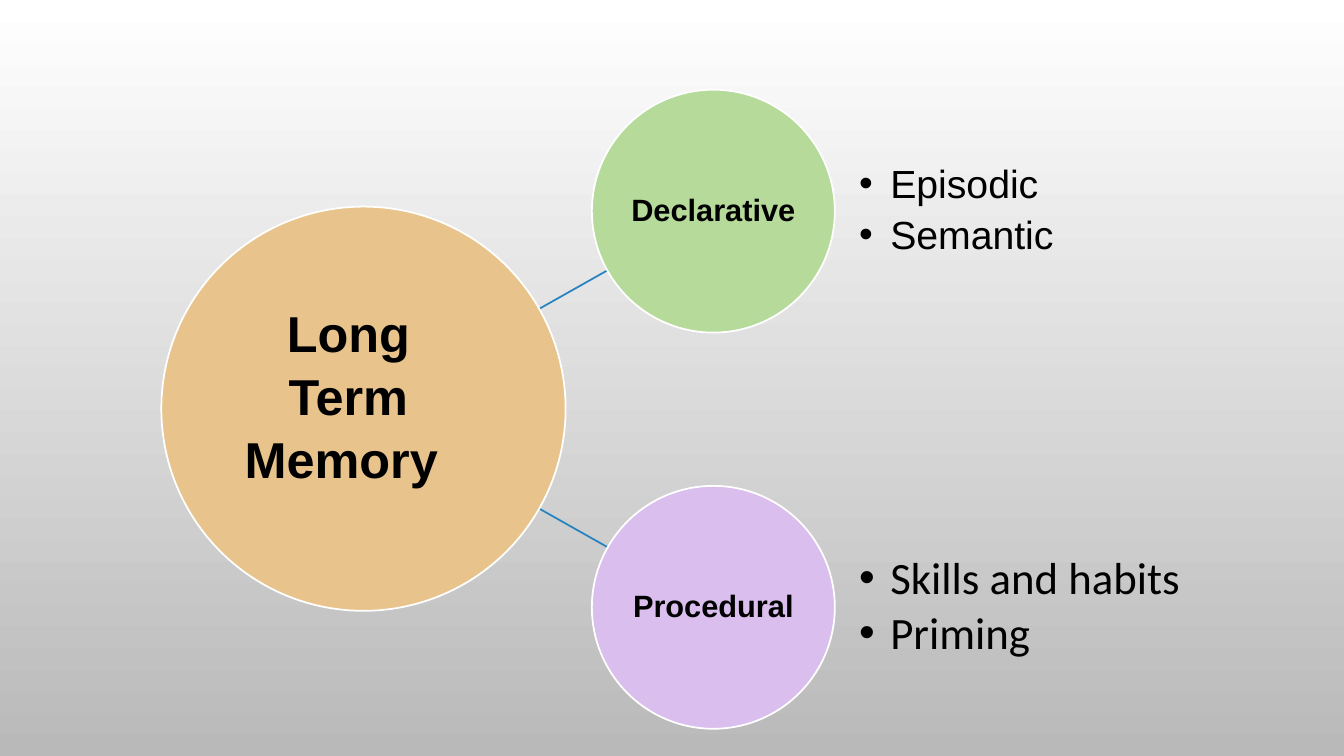
import pptx
import pptx.util
import pptx.dml.color
import pptx.enum.shapes
import pptx.enum.text
from lxml import etree
from pptx.oxml.ns import qn

Inches, Pt = pptx.util.Inches, pptx.util.Pt

# Content
HUB = "Long Term Memory "
BRANCHES = [
    dict(name="Declarative ", fill="B6DA9A", items=["Episodic", "Semantic"],
         font="Arial", size=28, gap=6),
    dict(name="Procedural ", fill="DABEED", items=["Skills and habits", "Priming"],
         font="Calibri", size=32, gap=4.5),
]

# Layout
HUB_LEFT, HUB_TOP, HUB_SIZE = 1.6, 2.05, 4.01
BRANCH_LEFT, BRANCH_TOP, BRANCH_SIZE, BRANCH_STEP = 5.87, 0.89, 2.41, 3.93
LIST_LEFT, LIST_WIDTH = 8.52, 3.61
LINK_START, LINK_END = (5.01, 0.8), (6.02, 1.37)  # x, distance from hub centre
INDENT = 0.31


def color(value):
    return pptx.dml.color.RGBColor.from_string(value)


def set_all(target, values):
    for name, value in values.items():
        setattr(target, name, value)


def set_frame(frame, inset):
    set_all(frame, dict(word_wrap=True,
                        vertical_anchor=pptx.enum.text.MSO_ANCHOR.MIDDLE))
    for side in ("left", "top", "right", "bottom"):
        setattr(frame, "margin_" + side, Inches(inset))


def write(para, text, font, size, bold=False, **layout):
    set_all(para, layout)
    span = para.add_run()
    span.text = text
    set_all(span.font, dict(name=font, size=Pt(size), bold=bold))
    span.font.color.rgb = color("000000")


def add_circle(page, left, top, width, height, fill=None):
    circle = page.shapes.add_shape(pptx.enum.shapes.MSO_SHAPE.OVAL, Inches(left),
                                   Inches(top), Inches(width), Inches(height))
    circle.shadow.inherit = False
    if fill:
        circle.fill.solid()
        circle.fill.fore_color.rgb = color(fill)
        circle.line.color.rgb = color("FFFFFF")
        circle.line.width = Pt(1.25)
    else:
        circle.fill.background()
        circle.line.fill.background()
    return circle


def add_link(page, direction):
    middle = HUB_TOP + HUB_SIZE / 2
    ends = [Inches(value) for x, rise in (LINK_START, LINK_END)
            for value in (x, middle + direction * rise)]
    link = page.shapes.add_connector(pptx.enum.shapes.MSO_CONNECTOR.STRAIGHT, *ends)
    link.line.color.rgb = color("2683BF")
    link.line.width = Pt(1.25)
    etree.SubElement(link._element.spPr, qn("a:effectLst"))


def add_bullet(para):
    props = para._p.get_or_add_pPr()
    props.set("marL", str(Inches(INDENT)))
    props.set("indent", str(-Inches(INDENT)))
    etree.SubElement(props, qn("a:buFont")).set("typeface", "Arial")
    etree.SubElement(props, qn("a:buChar")).set("char", "•")


def add_branch(page, top, branch):
    circle = add_circle(page, BRANCH_LEFT, top, BRANCH_SIZE, BRANCH_SIZE, branch["fill"])
    set_frame(circle.text_frame, 0.02)
    write(circle.text_frame.paragraphs[0], branch["name"], "Arial", 22, True,
          alignment=pptx.enum.text.PP_ALIGN.CENTER, line_spacing=0.9)

    box = page.shapes.add_textbox(Inches(LIST_LEFT), Inches(top),
                                  Inches(LIST_WIDTH), Inches(BRANCH_SIZE))
    set_frame(box.text_frame, 0)
    for number, item in enumerate(branch["items"]):
        para = box.text_frame.add_paragraph() if number else box.text_frame.paragraphs[0]
        add_bullet(para)
        write(para, item, branch["font"], branch["size"],
              line_spacing=0.9, space_after=Pt(branch["gap"]))


def main():
    deck = pptx.Presentation()
    set_all(deck, dict(slide_width=Inches(13.33), slide_height=Inches(7.5)))
    page = deck.slides.add_slide(deck.slide_layouts[6])

    # Background
    backdrop = page.background.fill
    backdrop.gradient()
    backdrop.gradient_angle = 270
    for stop, value, position in zip(backdrop.gradient_stops, ("FFFFFF", "B9B9B9"), (0, 1)):
        stop.color.rgb = color(value)
        stop.position = position

    # Links behind the circles
    for direction in (-1, 1):
        add_link(page, direction)

    # Hub, branches and their lists
    add_circle(page, HUB_LEFT, HUB_TOP, HUB_SIZE, HUB_SIZE, "E8C48C")
    for number, branch in enumerate(BRANCHES):
        add_branch(page, BRANCH_TOP + number * BRANCH_STEP, branch)

    # Hub label
    label = add_circle(page, 1.78, 2.25, 3.35, 3.32).text_frame
    set_frame(label, 0.1)
    write(label.paragraphs[0], HUB, "Arial", 36, True,
          alignment=pptx.enum.text.PP_ALIGN.CENTER, line_spacing=1.04)

    deck.save("out.pptx")


if __name__ == "__main__":
    main()
